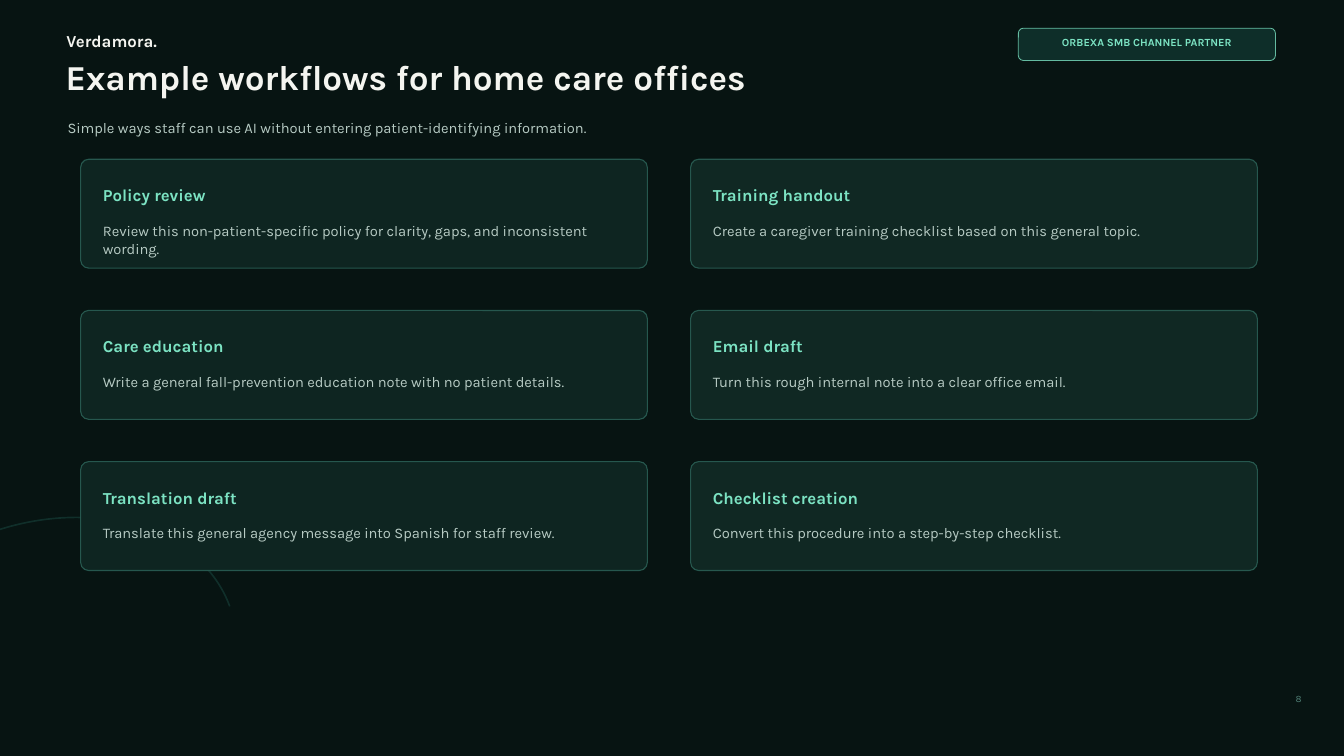
"""Build the slide of example AI workflows for home care offices."""
from lxml import etree
from pptx import Presentation
from pptx.dml.color import RGBColor
from pptx.enum.shapes import MSO_SHAPE
from pptx.enum.text import MSO_ANCHOR, MSO_AUTO_SIZE, PP_ALIGN
from pptx.oxml.ns import qn
from pptx.util import Inches, Pt

ARC, ROUNDED = MSO_SHAPE.ARC, MSO_SHAPE.ROUNDED_RECTANGLE
TOP, MIDDLE = MSO_ANCHOR.TOP, MSO_ANCHOR.MIDDLE
LEFT, CENTER = PP_ALIGN.LEFT, PP_ALIGN.CENTER
NO_AUTOFIT = MSO_AUTO_SIZE.NONE

BRAND = "Verdamora."
BADGE = "ORBEXA SMB CHANNEL PARTNER"
TITLE = "Example workflows for home care offices"
SUBTITLE = "Simple ways staff can use AI without entering patient-identifying information."
PAGE_NUMBER = "8"
WORKFLOWS = [
    ("Policy review", "Review this non-patient-specific policy for clarity, gaps, and inconsistent wording."),
    ("Training handout", "Create a caregiver training checklist based on this general topic."),
    ("Care education", "Write a general fall-prevention education note with no patient details."),
    ("Email draft", "Turn this rough internal note into a clear office email."),
    ("Translation draft", "Translate this general agency message into Spanish for staff review."),
    ("Checklist creation", "Convert this procedure into a step-by-step checklist."),
]

FONT = "Karla"
COLORS = {
    "background": "071412",
    "arc": "12322D",
    "badge": "0F2F2A",
    "mint": "7CE3C3",
    "white": "F4F5F0",
    "body": "B7CBC4",
    "border": "2A5E54",
    "page": "4E7D73",
}
CARD_FILLS = ("0E2521", "102823")
CARD_LEFT, CARD_TOP = 0.8, 1.58
CARD_WIDTH, CARD_HEIGHT = 5.62, 1.08
COLUMN_STEP, ROW_STEP = 6.05, 1.5
CARD_PADDING = 0.22


def set_opacity(fill_format_parent, percent):
    """Set the opacity of the solid fill below an XML element."""
    color = fill_format_parent.find(qn("a:solidFill"))[0]
    etree.SubElement(color, qn("a:alpha")).set("val", str(percent * 1000))


def add_outline(slide, kind, box, line_color, line_width, opacity, fill=None):
    """Add a preset shape with a translucent outline."""
    shape = slide.shapes.add_shape(kind, *map(Inches, box))
    shape.shadow.inherit = False
    if fill:
        shape.fill.solid()
        shape.fill.fore_color.rgb = RGBColor.from_string(fill)
    else:
        shape.fill.background()
    shape.line.color.rgb = RGBColor.from_string(line_color)
    shape.line.width = Pt(line_width)
    set_opacity(shape.line._get_or_add_ln(), opacity)
    return shape


def write_text(shape, text, size, color, bold=False, align=LEFT, anchor=MIDDLE):
    """Write one formatted paragraph into a shape without insets."""
    frame = shape.text_frame
    frame.text = text
    frame.word_wrap = True
    frame.auto_size = NO_AUTOFIT
    frame.vertical_anchor = anchor
    frame.margin_left = frame.margin_right = frame.margin_top = frame.margin_bottom = 0
    paragraph = frame.paragraphs[0]
    paragraph.alignment = align
    paragraph.font.name = FONT
    paragraph.font.size = Pt(size)
    paragraph.font.bold = bold
    paragraph.font.color.rgb = RGBColor.from_string(COLORS[color])


def add_text(slide, box, *content, **style):
    """Add a text box with one paragraph."""
    write_text(slide.shapes.add_textbox(*map(Inches, box)), *content, **style)


def add_card(slide, index, heading, prompt):
    """Add one workflow card at its place in the two-column grid."""
    row, column = divmod(index, 2)
    left = CARD_LEFT + column * COLUMN_STEP
    top = CARD_TOP + row * ROW_STEP
    card = add_outline(slide, ROUNDED, (left, top, CARD_WIDTH, CARD_HEIGHT),
                       COLORS["border"], 0.8, 90, CARD_FILLS[column])
    card.adjustments[0] = 0.074
    text_left, text_width = left + CARD_PADDING, CARD_WIDTH - 2 * CARD_PADDING
    add_text(slide, (text_left, top + 0.18, text_width, 0.35), heading, 12, "mint", bold=True)
    add_text(slide, (text_left, top + 0.62, text_width, 0.26), prompt, 10.5, "body", anchor=TOP)


def main():
    """Create and save the presentation."""
    presentation = Presentation()
    presentation.slide_width, presentation.slide_height = Inches(13.33), Inches(7.5)
    slide = presentation.slides.add_slide(presentation.slide_layouts[5])
    slide.background.fill.solid()
    slide.background.fill.fore_color.rgb = RGBColor.from_string(COLORS["background"])

    title = slide.shapes.title
    title.left, title.top, title.width, title.height = map(Inches, (0.65, 0.48, 9.6, 0.55))
    write_text(title, TITLE, 25, "white", bold=True)

    arc = add_outline(slide, ARC, (-1.6, 5.2, 4, 3), COLORS["arc"], 1.2, 90)
    arc.rotation = 340

    add_text(slide, (0.66, 0.28, 1.8, 0.25), BRAND, 12, "white", bold=True)
    badge = add_outline(slide, ROUNDED, (10.1, 0.28, 2.55, 0.32),
                        COLORS["mint"], 0.6, 80, COLORS["badge"])
    badge.adjustments[0] = 0.156
    set_opacity(badge._element.spPr, 98)
    add_text(slide, (10.2, 0.34, 2.35, 0.16), BADGE, 7.8, "mint", bold=True, align=CENTER)
    add_text(slide, (0.67, 1.09, 8.9, 0.35), SUBTITLE, 10.5, "body")

    for index, (heading, prompt) in enumerate(WORKFLOWS):
        add_card(slide, index, heading, prompt)

    add_text(slide, (12.85, 6.87, 0.4, 0.23), PAGE_NUMBER, 7, "page", anchor=TOP)
    presentation.save("out.pptx")


if __name__ == "__main__":
    main()
